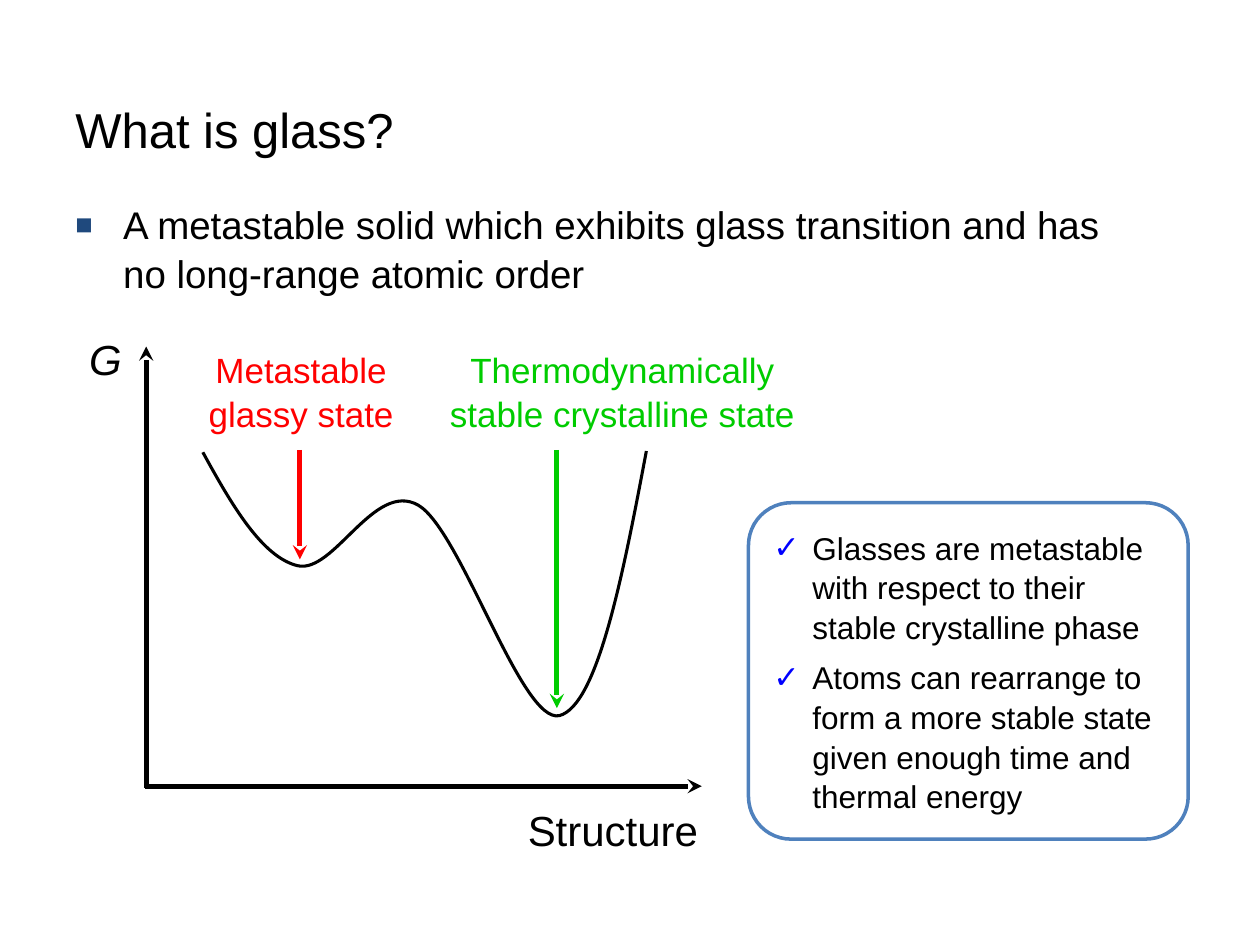
from lxml import etree
from pptx import Presentation
from pptx.dml.color import RGBColor
from pptx.enum import shapes, text
from pptx.oxml.ns import qn
from pptx.util import Inches, Pt

BLACK, WHITE, RED, GREEN = "000000", "FFFFFF", "FF0000", "00CC00"

# Start point, then two control points and an end point per segment
ENERGY_CURVE = [
    (1.61, 3.59),
    (1.84, 4.01), (2.08, 4.42), (2.36, 4.49),
    (2.65, 4.56), (2.97, 3.81), (3.32, 4.01),
    (3.66, 4.21), (4.14, 5.75), (4.44, 5.68),
    (4.74, 5.60), (4.94, 4.59), (5.13, 3.58),
]


def rgb(color):
    return RGBColor.from_string(color)


def style_line(line, color, width):
    line.color.rgb = rgb(color)
    line.width = Pt(width)


def add_bullet(p, char, color, indent, size=100):
    """Give the paragraph a coloured bullet with a hanging indent."""
    pPr = p._p.get_or_add_pPr()
    pPr.set("marL", str(Inches(indent)))
    pPr.set("indent", str(-Inches(indent)))
    bu_clr = etree.SubElement(pPr, qn("a:buClr"))
    etree.SubElement(bu_clr, qn("a:srgbClr"), val=color)
    etree.SubElement(pPr, qn("a:buSzPct"), val=str(size * 1000))
    etree.SubElement(pPr, qn("a:buFont"), typeface="Arial")
    etree.SubElement(pPr, qn("a:buChar"), char=char)


def write(sp, paragraphs, size, color=BLACK, align=text.PP_ALIGN.LEFT,
          italic=False, bullet=None):
    tf = sp.text_frame
    tf.text = "\n".join(paragraphs)
    for i, p in enumerate(tf.paragraphs):
        p.alignment = align
        p.line_spacing = 1.05
        if i:
            p.space_before = Pt(6)
        if bullet:
            add_bullet(p, **bullet)
        for r in p.runs:
            r.font.name = "Arial"
            r.font.size = Pt(size)
            r.font.italic = italic
            r.font.color.rgb = rgb(color)


def add_text(slide, box, content, size, wrap=True,
             anchor=text.MSO_ANCHOR.TOP, **style):
    sp = slide.shapes.add_textbox(*map(Inches, box))
    sp.text_frame.word_wrap = wrap
    sp.text_frame.vertical_anchor = anchor
    write(sp, [content], size, **style)


def add_arrow(slide, start, end, color):
    arrow = slide.shapes.add_connector(
        shapes.MSO_CONNECTOR.STRAIGHT, *map(Inches, start + end))
    style_line(arrow.line, color, 2.75)
    etree.SubElement(arrow.line._get_or_add_ln(), qn("a:tailEnd"), type="stealth")
    etree.SubElement(arrow._element.spPr, qn("a:effectLst"))


def add_curve(slide, points, color, width):
    """Draw a Bezier path by joining each three line points into one curve."""
    start, *rest = [(Inches(x), Inches(y)) for x, y in points]
    builder = slide.shapes.build_freeform(*start)
    builder.add_line_segments(rest, close=False)
    sp = builder.convert_to_shape()
    sp.shadow.inherit = False
    sp.fill.background()
    style_line(sp.line, color, width)
    segments = list(sp._element.iter(qn("a:lnTo")))
    for i in range(0, len(segments), 3):
        curve = etree.Element(qn("a:cubicBezTo"))
        segments[i].addprevious(curve)
        for segment in segments[i:i + 3]:
            curve.append(segment[0])
            segment.getparent().remove(segment)


def add_callout(slide, box, paragraphs):
    sp = slide.shapes.add_shape(
        shapes.MSO_SHAPE.ROUNDED_RECTANGLE, *map(Inches, box))
    sp.adjustments[0] = 0.127
    sp.shadow.inherit = False
    sp.fill.solid()
    sp.fill.fore_color.rgb = rgb(WHITE)
    style_line(sp.line, "4F81BD", 2)
    sp.text_frame.word_wrap = True
    sp.text_frame.vertical_anchor = text.MSO_ANCHOR.MIDDLE
    write(sp, paragraphs, 18,
          bullet=dict(char="✓", color="0000FF", indent=0.31))


def main():
    prs = Presentation()
    prs.slide_width, prs.slide_height = Inches(10), Inches(7.5)
    slide = prs.slides.add_slide(prs.slide_layouts[6])
    center = text.PP_ALIGN.CENTER

    add_text(slide, (0.5, 0.5, 9, 1.02), "What is glass?", 28,
             anchor=text.MSO_ANCHOR.MIDDLE)
    add_text(slide, (0.5, 1.53, 8.73, 4.67),
             "A metastable solid which exhibits glass transition and has "
             "no long-range atomic order", 22,
             bullet=dict(char="■", color="1F497D", indent=0.38, size=75))

    add_arrow(slide, (1.16, 6.25), (1.16, 2.75), BLACK)
    add_arrow(slide, (1.15, 6.24), (5.57, 6.24), BLACK)
    add_text(slide, (0.61, 2.58, 0.46, 0.5), "G", 24, wrap=False, italic=True)
    add_text(slide, (4.08, 6.32, 1.57, 0.5), "Structure", 24, wrap=False,
             align=center)
    add_curve(slide, ENERGY_CURVE, BLACK, 1.75)

    states = [
        ("Metastable glassy state", RED, 1.39, 2, 2.38, 4.44),
        ("Thermodynamically stable crystalline state", GREEN,
         3.36, 3.16, 4.42, 5.62),
    ]
    for label, color, left, width, arrow_x, tip_y in states:
        add_arrow(slide, (arrow_x, 3.57), (arrow_x, tip_y), color)
        add_text(slide, (left, 2.7, width, 0.77), label, 20, color=color,
                 align=center)

    add_callout(slide, (5.94, 3.99, 3.49, 2.67), [
        "Glasses are metastable with respect to their stable crystalline phase",
        "Atoms can rearrange to form a more stable state given enough time "
        "and thermal energy",
    ])
    prs.save("out.pptx")


if __name__ == "__main__":
    main()
